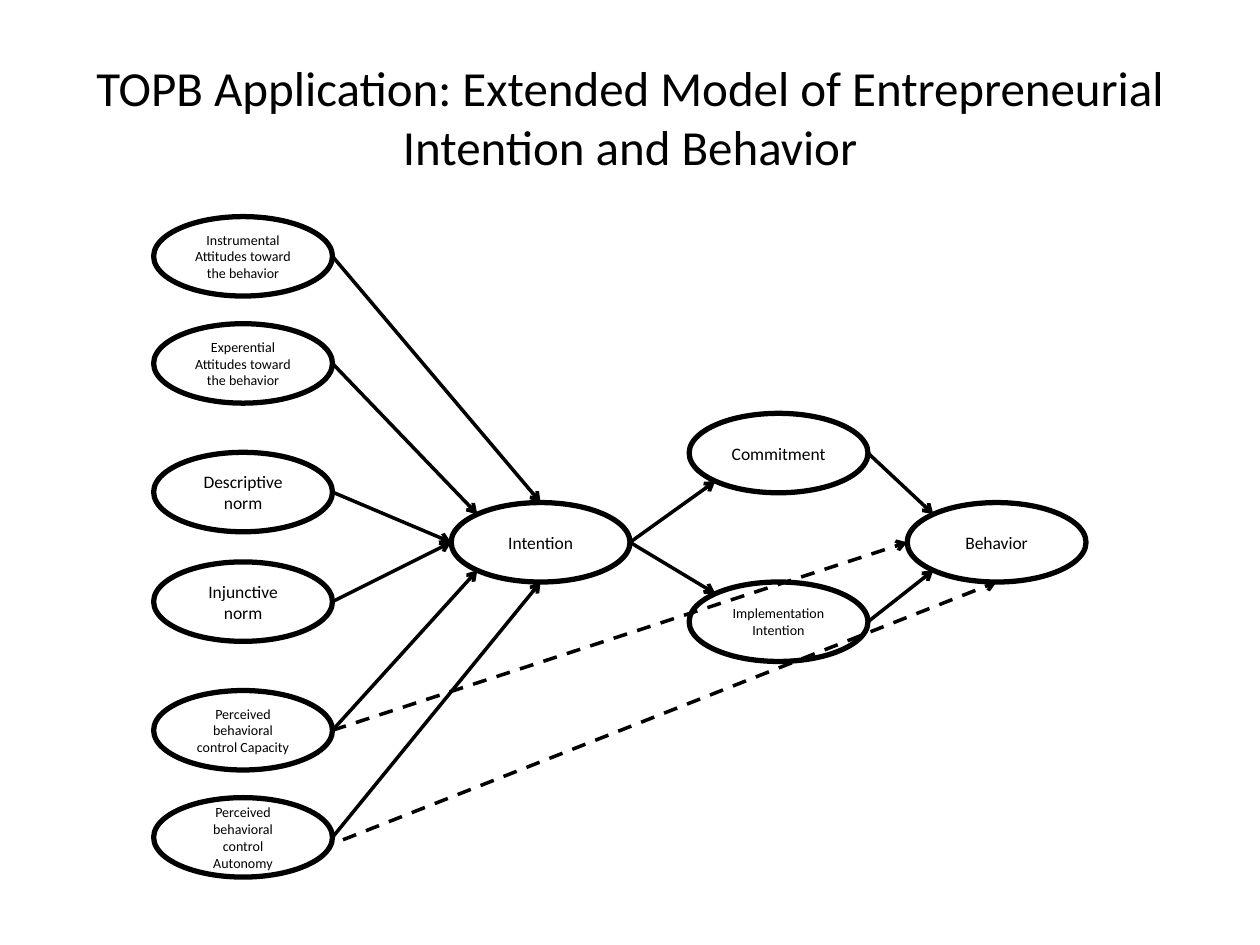
from dataclasses import dataclass
from math import sqrt

from lxml import etree
from pptx import Presentation
from pptx import util as u
from pptx.dml.color import RGBColor
from pptx.enum import dml, shapes, text
from pptx.oxml import ns

BLACK = RGBColor(0, 0, 0)
FONT = "Calibri"
NODE_W, NODE_H = 102.2, 45.4
D = sqrt(0.5)
# Points on an ellipse, as fractions of its half width and half height
SITES = {"top": (0, -1), "bottom": (0, 1), "left": (-1, 0), "right": (1, 0),
         "top left": (-D, -D), "bottom left": (-D, D)}


@dataclass
class Node:
    label: str
    left: float
    top: float
    size: float = 10

    def site(self, name: str) -> tuple[float, float]:
        fx, fy = SITES[name]
        return (self.left + NODE_W / 2 * (1 + fx),
                self.top + NODE_H / 2 * (1 + fy))


@dataclass
class Link:
    source: str
    target: str
    site: str
    dashed: bool = False
    shift: tuple[float, float] = (0, 0)


# Model: antecedents, intention, mediators, behavior
COL_1, COL_2, COL_3, COL_4 = 87.8, 257.8, 393.8, 518.4
NODES = {
    "instrumental": Node("Instrumental Attitudes toward the behavior", COL_1, 123.8, 8),
    "experiential": Node("Experential Attitudes toward the behavior", COL_1, 185, 8),
    "descriptive": Node("Descriptive norm", COL_1, 258.5),
    "injunctive": Node("Injunctive norm", COL_1, 321.1),
    "capacity": Node("Perceived behavioral control Capacity", COL_1, 394.6, 8),
    "autonomy": Node("Perceived behavioral control Autonomy", COL_1, 455.8, 8),
    "intention": Node("Intention", COL_2, 287.2),
    "commitment": Node("Commitment", COL_3, 236.2),
    "implementation": Node("Implementation Intention", COL_3, 332.6, 8),
    "behavior": Node("Behavior", COL_4, 287.2),
}
LINKS = [
    Link("instrumental", "intention", "top"),
    Link("experiential", "intention", "top left"),
    Link("descriptive", "intention", "left"),
    Link("injunctive", "intention", "left"),
    Link("capacity", "intention", "bottom left"),
    Link("autonomy", "intention", "bottom"),
    Link("intention", "commitment", "bottom left"),
    Link("intention", "implementation", "top left"),
    Link("commitment", "behavior", "top left"),
    Link("implementation", "behavior", "bottom left"),
    Link("autonomy", "behavior", "bottom", True, (6, 1.4)),
    Link("capacity", "behavior", "left", True),
]


def add_text(tf, content: str, size: float) -> None:
    tf.word_wrap = True
    tf.vertical_anchor = text.MSO_ANCHOR.MIDDLE
    p = tf.paragraphs[0]
    p.alignment = text.PP_ALIGN.CENTER
    r = p.add_run()
    r.text = content
    r.font.name, r.font.size = FONT, u.Pt(size)
    r.font.color.rgb = BLACK


def draw_node(s, node: Node) -> None:
    sp = s.shapes.add_shape(shapes.MSO_SHAPE.OVAL, u.Pt(node.left), u.Pt(node.top),
                            u.Pt(NODE_W), u.Pt(NODE_H))
    sp.shadow.inherit = False
    sp.fill.background()
    sp.line.color.rgb = BLACK
    sp.line.width = u.Pt(3)
    add_text(sp.text_frame, node.label, node.size)


def draw_link(s, link: Link) -> None:
    x, y = NODES[link.source].site("right")
    dx, dy = link.shift
    ends = (x + dx, y + dy, *NODES[link.target].site(link.site))
    cxn = s.shapes.add_connector(shapes.MSO_CONNECTOR.STRAIGHT, *map(u.Pt, ends))
    cxn.line.color.rgb = BLACK
    cxn.line.width = u.Pt(2)
    if link.dashed:
        cxn.line.dash_style = dml.MSO_LINE.DASH
    # Arrowhead, and no theme shadow
    sp_pr = cxn._element.spPr
    etree.SubElement(sp_pr.find(ns.qn("a:ln")), ns.qn("a:tailEnd"), type="arrow")
    etree.SubElement(sp_pr, ns.qn("a:effectLst"))


def main() -> None:
    prs = Presentation()
    prs.slide_width, prs.slide_height = u.Pt(720), u.Pt(540)
    s = prs.slides.add_slide(prs.slide_layouts[5])

    # Title
    title = s.shapes.title
    title.left, title.top = u.Pt(36), u.Pt(21.6)
    title.width, title.height = u.Pt(648), u.Pt(90)
    add_text(title.text_frame, "TOPB Application: Extended Model of Entrepreneurial "
             "Intention and Behavior", 28)

    # Diagram
    for node in NODES.values():
        draw_node(s, node)
    for link in LINKS:
        draw_link(s, link)
    prs.save("out.pptx")


if __name__ == "__main__":
    main()
